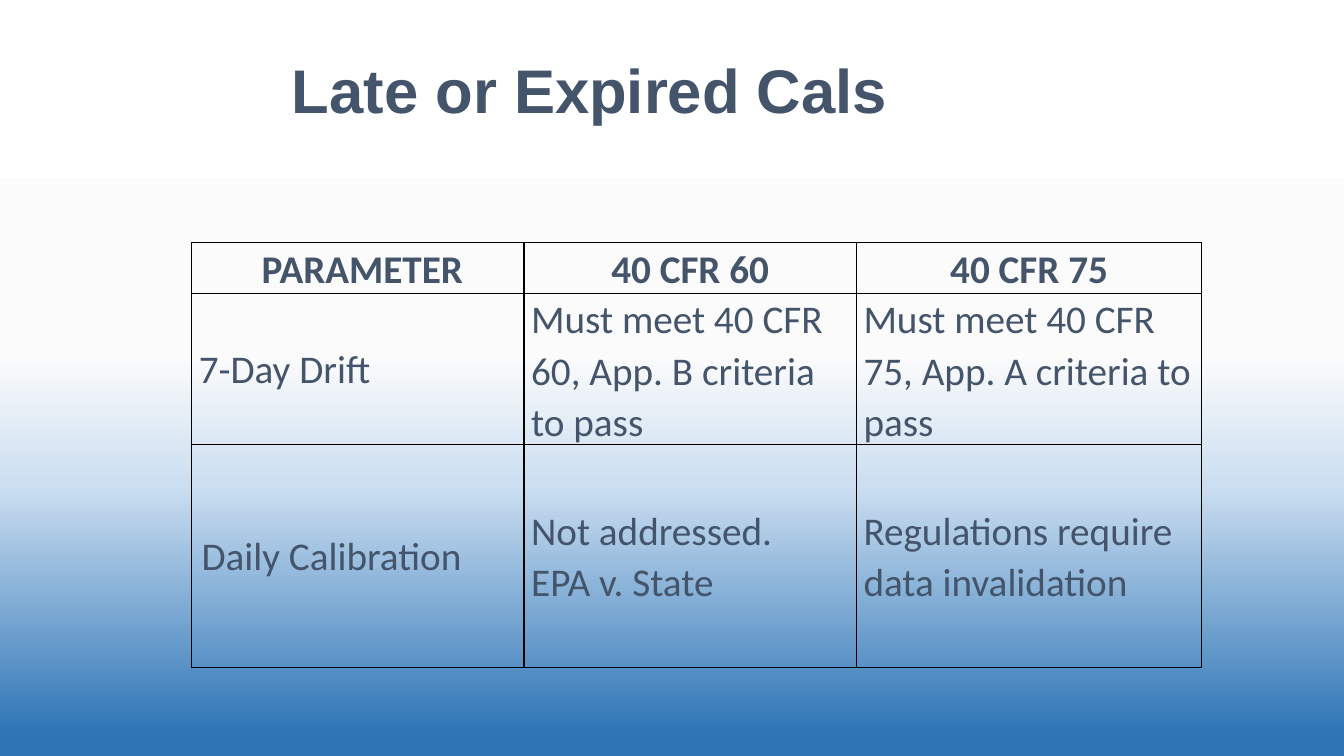
from lxml import etree
from pptx import Presentation
from pptx.dml.color import RGBColor
from pptx.enum.text import MSO_ANCHOR, PP_ALIGN
from pptx.oxml.ns import qn
from pptx.util import Cm, Pt

MIDDLE, TOP = MSO_ANCHOR.MIDDLE, MSO_ANCHOR.TOP
CENTER, LEFT = PP_ALIGN.CENTER, PP_ALIGN.LEFT
SLATE = RGBColor(0x44, 0x54, 0x6A)
BLACK = RGBColor(0x00, 0x00, 0x00)
WHITE = RGBColor(0xFF, 0xFF, 0xFF)
OFF_WHITE = RGBColor(0xFB, 0xFB, 0xFB)
PALE_BLUE = RGBColor(0xCC, 0xDF, 0xF1)
BLUE = RGBColor(0x2E, 0x75, 0xB6)

GRADIENT = [(0, WHITE), (47, OFF_WHITE), (64, PALE_BLUE), (97, BLUE)]
TITLE_FONT = {"name": "Arial", "size": Pt(44), "bold": True}
HEAD_FONT = {"name": "Calibri", "size": Pt(28), "bold": True}
BODY_FONT = {"name": "Calibri", "size": Pt(28), "bold": False}
TIGHT = {"margin_left": Cm(0.18), "margin_right": Cm(0.18),
         "margin_top": 0, "margin_bottom": 0}
ROOMY = {"margin_left": Cm(0.25), "margin_right": Cm(0.25),
         "margin_top": Cm(0.13), "margin_bottom": Cm(0.13)}
COL_SHARES = [3.3, 3.3, 3.43]
ROW_SHARES = [0.47, 1.46, 2.21]
ROWS = [
    [" PARAMETER", "40 CFR 60", "40 CFR 75"],
    ["7-Day Drift", "Must meet 40 CFR 60, App. B criteria to pass",
     "Must meet 40 CFR 75, App. A criteria to pass"],
    ["Daily Calibration", "Not addressed.\nEPA v. State",
     "Regulations require data invalidation"],
]


def set_all(obj, values):
    """Set each named attribute of an object."""
    for name, value in values.items():
        setattr(obj, name, value)


def write(tf, text, font, align, spacing):
    """Write one paragraph per line of text."""
    tf.text = text
    for p in tf.paragraphs:
        p.alignment, p.line_spacing = align, spacing
        for r in p.runs:
            set_all(r.font, font)
            r.font.color.rgb = SLATE


def add_color(parent, color):
    """Add an RGB colour element."""
    etree.SubElement(parent, qn("a:srgbClr"), val=str(color))


def paint_background(s):
    """Fill the slide with a top-to-bottom gradient."""
    fill = s.background.fill
    fill.gradient()
    fill.gradient_angle = 270
    stops = next(s.element.iter(qn("a:gsLst")))
    for stop in list(stops):
        stops.remove(stop)
    for percent, color in GRADIENT:
        add_color(etree.SubElement(stops, qn("a:gs"), pos=str(percent * 1000)), color)


def add_title(s, text, x, y, w, h):
    """Place the slide title in the given box."""
    tf = s.shapes.add_textbox(x, y, w, h).text_frame
    set_all(tf, {"word_wrap": True, "vertical_anchor": MIDDLE})
    write(tf, text, TITLE_FONT, CENTER, 0.9)


def add_borders(cell):
    """Draw a thin black line on all four sides of a cell."""
    tc_pr = cell._tc.get_or_add_tcPr()
    for i, side in enumerate("LRTB"):
        ln = etree.Element(qn("a:ln" + side), w=str(Pt(1)))
        add_color(etree.SubElement(ln, qn("a:solidFill")), BLACK)
        tc_pr.insert(i, ln)


def add_rules_table(s, x, y, w, h):
    """Place the calibration rules table in the given box."""
    table = s.shapes.add_table(len(ROWS), len(COL_SHARES), x, y, w, h).table
    set_all(table, {"first_row": False, "horz_banding": False})
    for col, share in zip(table.columns, COL_SHARES):
        col.width = int(w * share / sum(COL_SHARES))
    for row, share in zip(table.rows, ROW_SHARES):
        row.height = int(h * share / sum(ROW_SHARES))
    for i, texts in enumerate(ROWS):
        font, align, anchor = (BODY_FONT, LEFT, MIDDLE) if i else (HEAD_FONT, CENTER, TOP)
        for j, text in enumerate(texts):
            cell = table.cell(i, j)
            set_all(cell, ROOMY if text == "Daily Calibration" else TIGHT)
            cell.vertical_anchor = anchor
            cell.fill.background()
            add_borders(cell)
            write(cell.text_frame, text, font, align, 1.07)


def main():
    """Build and save the slide."""
    prs = Presentation()
    prs.slide_width, prs.slide_height = Cm(33.87), Cm(19.05)
    s = prs.slides.add_slide(prs.slide_layouts[6])
    paint_background(s)
    add_title(s, "Late or Expired Cals", Cm(1.8), Cm(1.27), Cm(26.14), Cm(2.18))
    add_rules_table(s, Cm(4.83), Cm(6.12), Cm(25.46), Cm(10.52))
    prs.save("out.pptx")


if __name__ == "__main__":
    main()
